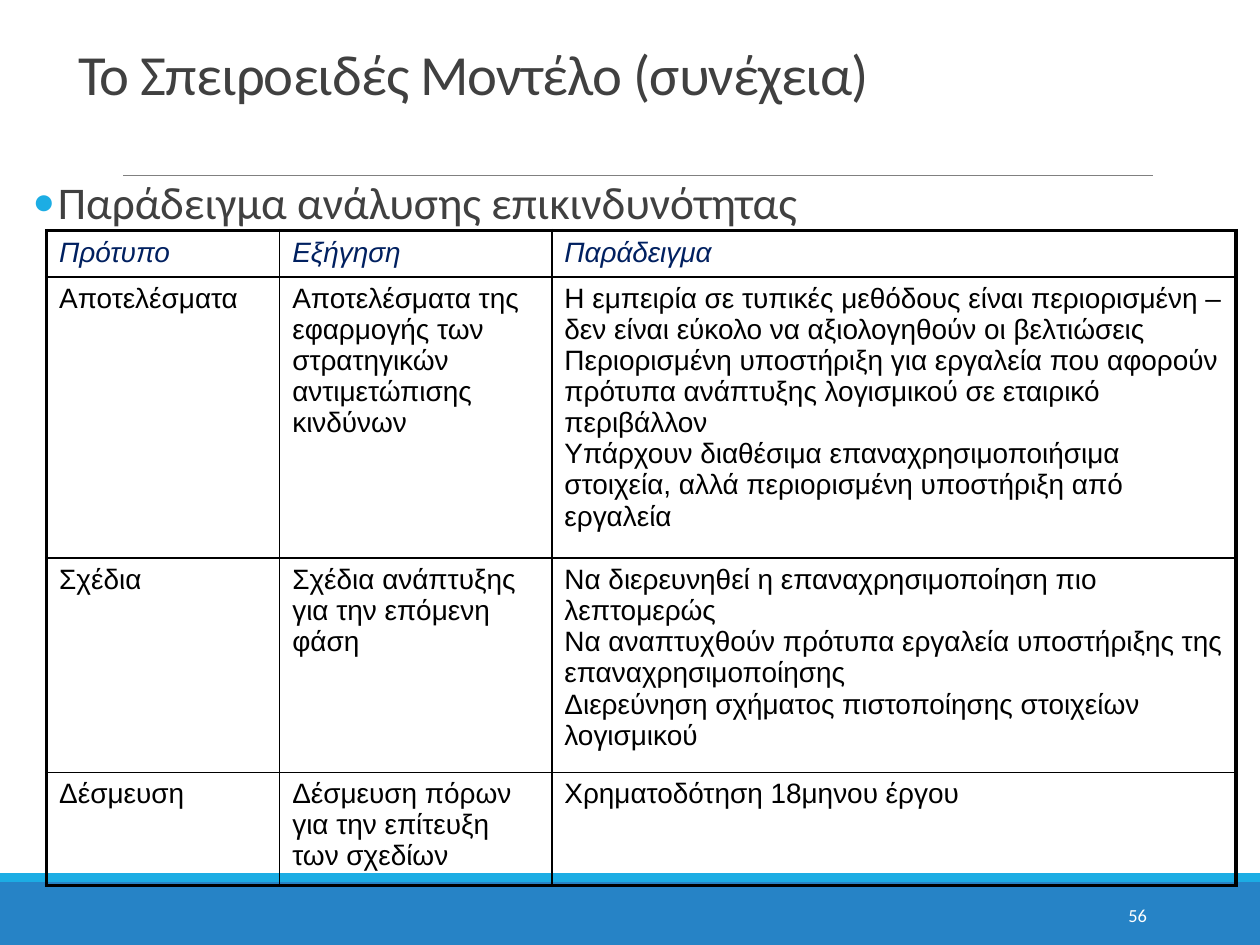
from lxml.etree import SubElement
from pptx import Presentation
from pptx.dml.color import RGBColor
from pptx.enum.shapes import MSO_CONNECTOR, MSO_SHAPE
from pptx.enum.text import MSO_ANCHOR, MSO_AUTO_SIZE, PP_ALIGN
from pptx.oxml.ns import qn
from pptx.util import Inches, Pt

TITLE = "Το Σπειροειδές Μοντέλο (συνέχεια)"
SUBTITLE = "Παράδειγμα ανάλυσης επικινδυνότητας"
PAGE_NUMBER = "56"
BANDS = [(7, 0.5, "2683C6"), (6.93, 0.07, "1CADE4")]  # top, height, colour
COLUMN_WIDTHS = [1.85, 2.16, 5.43]
ROW_HEIGHTS = [0.34, 2.08, 1.58, 0.84]
ROWS = [
    ["Πρότυπο", "Εξήγηση", "Παράδειγμα"],
    ["Αποτελέσματα",
     "Αποτελέσματα της εφαρμογής των στρατηγικών αντιμετώπισης κινδύνων",
     "Η εμπειρία σε τυπικές μεθόδους είναι περιορισμένη – "
     "δεν είναι εύκολο να αξιολογηθούν οι βελτιώσεις\n"
     "Περιορισμένη υποστήριξη για εργαλεία που αφορούν "
     "πρότυπα ανάπτυξης λογισμικού σε εταιρικό περιβάλλον\n"
     "Υπάρχουν διαθέσιμα επαναχρησιμοποιήσιμα στοιχεία, "
     "αλλά περιορισμένη υποστήριξη από εργαλεία"],
    ["Σχέδια",
     "Σχέδια ανάπτυξης για την επόμενη φάση",
     "Να διερευνηθεί η επαναχρησιμοποίηση πιο λεπτομερώς\n"
     "Να αναπτυχθούν πρότυπα εργαλεία υποστήριξης της επαναχρησιμοποίησης\n"
     "Διερεύνηση σχήματος πιστοποίησης στοιχείων λογισμικού"],
    ["Δέσμευση",
     "Δέσμευση πόρων για την επίτευξη των σχεδίων",
     "Χρηματοδότηση 18μηνου έργου"],
]


def rgb(value):
    return RGBColor.from_string(value)


def set_font(paragraph, name, size, color, italic=False):
    font = paragraph.font
    font.name, font.size, font.italic = name, Pt(size), italic
    font.color.rgb = rgb(color)


def place(shape, left, top, width, height):
    shape.left, shape.top = Inches(left), Inches(top)
    shape.width, shape.height = Inches(width), Inches(height)


def add_text(slide, box, text, size, color):
    shape = slide.shapes.add_textbox(*map(Inches, box))
    frame = shape.text_frame
    frame.word_wrap = True
    frame.text = text
    set_font(frame.paragraphs[0], "Calibri", size, color)
    return frame


def add_bullet(paragraph, color):
    properties = paragraph._p.get_or_add_pPr()
    properties.set("marL", str(Inches(0.2)))
    properties.set("indent", str(Inches(-0.2)))
    bullet_color = SubElement(properties, qn("a:buClr"))
    SubElement(bullet_color, qn("a:srgbClr"), val=color)
    SubElement(properties, qn("a:buFont"), typeface="Calibri")
    SubElement(properties, qn("a:buChar"), char="•")


def set_borders(cell, widths):
    """Draw black borders; widths maps L, R, T, B (in that order) to points."""
    properties = cell._tc.get_or_add_tcPr()
    for side, width in widths.items():
        line = SubElement(properties, qn(f"a:ln{side}"), w=str(Pt(width)))
        fill = SubElement(line, qn("a:solidFill"))
        SubElement(fill, qn("a:srgbClr"), val="000000")


def add_backdrop(slide):
    for top, height, color in BANDS:
        band = slide.shapes.add_shape(
            MSO_SHAPE.RECTANGLE, 0, Inches(top), Inches(10), Inches(height))
        band.shadow.inherit = False
        band.fill.solid()
        band.fill.fore_color.rgb = rgb(color)
        band.line.fill.background()
    rule = slide.shapes.add_connector(
        MSO_CONNECTOR.STRAIGHT, Inches(0.98), Inches(1.39), Inches(9.15), Inches(1.39))
    rule.line.color.rgb = rgb("808080")
    rule.line.width = Pt(0.5)
    SubElement(rule._element.spPr, qn("a:effectLst"))


def add_title(slide):
    title = slide.shapes.title
    place(title, 0.52, 0.31, 9, 0.59)
    frame = title.text_frame
    frame.text = TITLE
    frame.word_wrap = True
    frame.auto_size = MSO_AUTO_SIZE.NONE
    frame.vertical_anchor = MSO_ANCHOR.BOTTOM
    paragraph = frame.paragraphs[0]
    paragraph.alignment = PP_ALIGN.LEFT
    paragraph.line_spacing = 0.85
    set_font(paragraph, "Calibri", 32.4, "404040")
    paragraph.runs[0]._r.get_or_add_rPr().set("spc", "-50")


def add_subtitle(slide):
    frame = add_text(slide, (0.26, 1.42, 9.23, 0.47), SUBTITLE, 25.9, "404040")
    frame.margin_left = frame.margin_right = 0
    paragraph = frame.paragraphs[0]
    paragraph.line_spacing = 0.8
    paragraph.space_before, paragraph.space_after = Pt(12), Pt(2)
    add_bullet(paragraph, "1CADE4")


def add_risk_table(slide):
    last_row, last_column = len(ROWS) - 1, len(COLUMN_WIDTHS) - 1
    frame = slide.shapes.add_table(
        len(ROWS), len(COLUMN_WIDTHS), Inches(0.37), Inches(1.83),
        Inches(sum(COLUMN_WIDTHS)), Inches(sum(ROW_HEIGHTS)))
    table = frame.table
    table.horz_banding = False
    for column, width in zip(table.columns, COLUMN_WIDTHS):
        column.width = Inches(width)
    for row, height in zip(table.rows, ROW_HEIGHTS):
        row.height = Inches(height)
    for r, texts in enumerate(ROWS):
        for c, text in enumerate(texts):
            cell = table.cell(r, c)
            cell.text = text
            for paragraph in cell.text_frame.paragraphs:
                set_font(paragraph, "Arial", 16, "000000" if r else "002060", r == 0)
                paragraph.font.bold = False
            outer = {"L": c == 0, "R": c == last_column, "T": r == 0, "B": r == last_row}
            set_borders(cell, {side: 2.25 if edge else 1 for side, edge in outer.items()})
            cell.fill.background()


def main():
    presentation = Presentation()
    presentation.slide_width, presentation.slide_height = Inches(10), Inches(7.5)
    slide = presentation.slides.add_slide(presentation.slide_layouts[5])
    add_backdrop(slide)
    add_title(slide)
    add_subtitle(slide)
    number = add_text(slide, (8.12, 7.06, 1.08, 0.4), PAGE_NUMBER, 10.5, "FFFFFF")
    number.vertical_anchor = MSO_ANCHOR.MIDDLE
    number.paragraphs[0].alignment = PP_ALIGN.RIGHT
    add_risk_table(slide)
    presentation.save("out.pptx")


if __name__ == "__main__":
    main()
